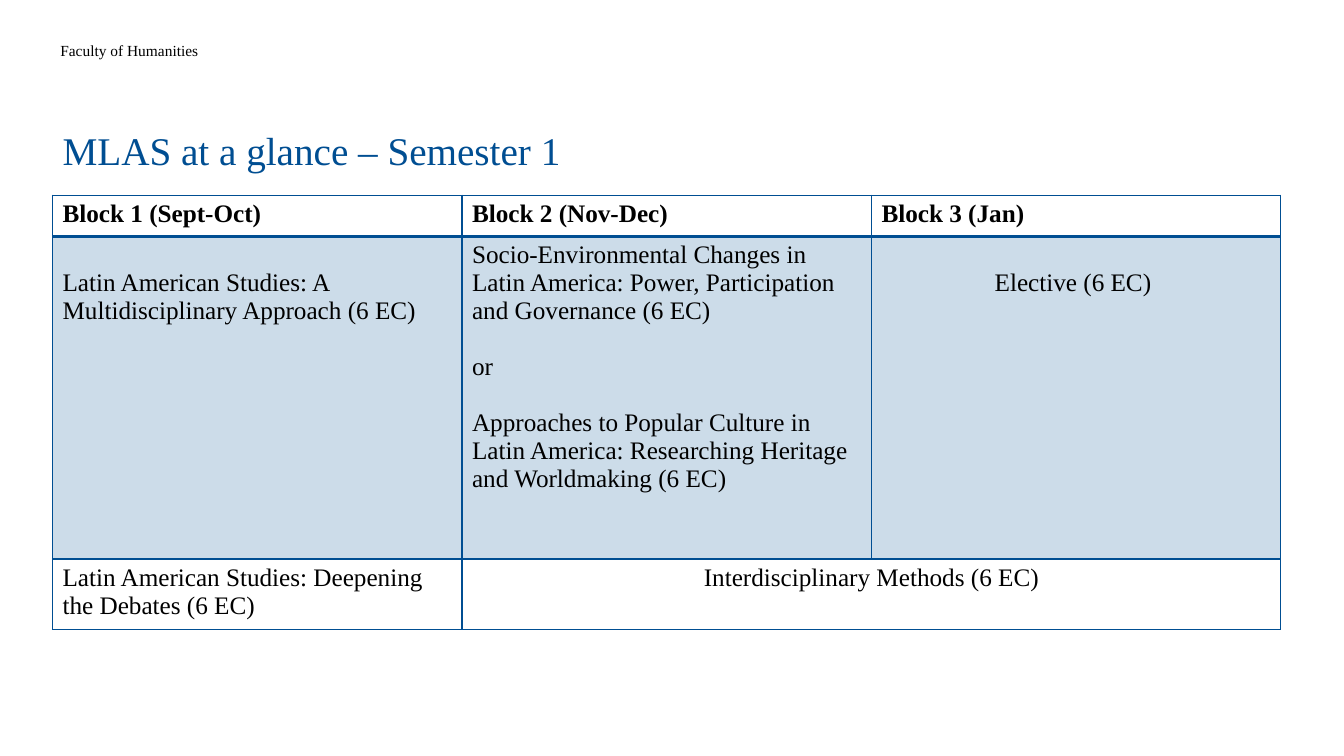
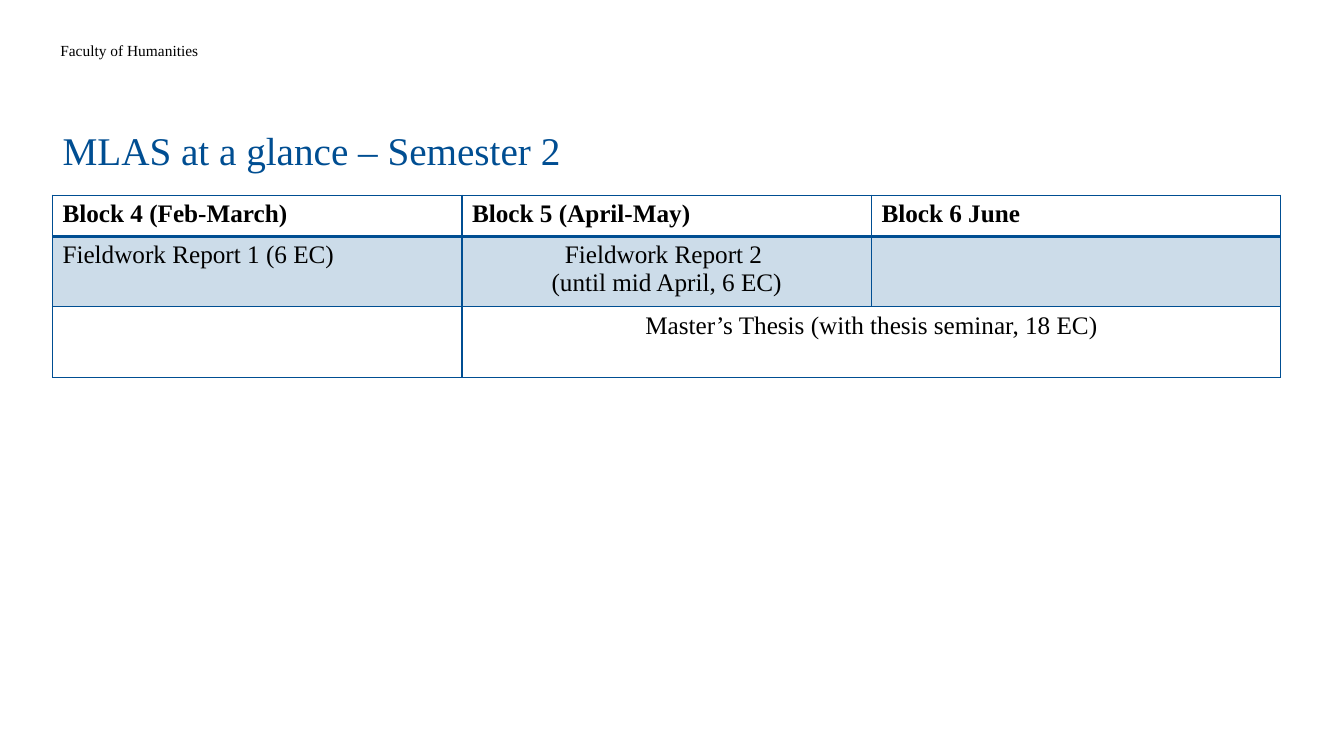
from dataclasses import dataclass

from lxml import etree
from pptx import Presentation
from pptx.dml.color import RGBColor
from pptx.enum.text import MSO_ANCHOR, MSO_AUTO_SIZE, PP_ALIGN
from pptx.oxml.ns import qn
from pptx.util import Pt

LEFT, CENTRE = PP_ALIGN.LEFT, PP_ALIGN.CENTER
BOTTOM = MSO_ANCHOR.BOTTOM
NO_FIT, GROW = MSO_AUTO_SIZE.NONE, MSO_AUTO_SIZE.SHAPE_TO_FIT_TEXT

COLOURS = {"blue": "004E92", "tint": "CCDCE9", "text": "000000"}
FONT = "Times New Roman"
TITLE_ONLY = 5
LINE = 20
CELL_MARGIN = 3.6
HEADER_BOX = (36, 26, 201.6, 21)
TITLE_BOX = (37.5, 54.7, 878.4, 73.4)
TABLE_BOX = (37.5, 139.5, 877.5)
HEADING_HEIGHT = 29.3
TWO_LINES = 50.4


@dataclass
class Entry:
    lines: tuple = ()
    align: int = LEFT
    gap: float = 0
    drop: float = 0
    span: int = 1


SEMESTERS = [
    (
        "MLAS at a glance – Semester 1",
        ("Block 1 (Sept-Oct)", "Block 2 (Nov-Dec)", "Block 3 (Jan)"),
        (230.5, TWO_LINES),
        [
            [
                Entry(("Latin American Studies: A Multidisciplinary Approach (6 EC)",), drop=LINE),
                Entry(
                    (
                        "Socio-Environmental Changes in Latin America: Power, "
                        "Participation and Governance (6 EC)",
                        "or",
                        "Approaches to Popular Culture in Latin America: "
                        "Researching Heritage and Worldmaking (6 EC)",
                    ),
                    gap=LINE,
                ),
                Entry(("Elective (6 EC) ",), CENTRE, drop=LINE),
            ],
            [
                Entry(("Latin American Studies: Deepening the Debates (6 EC)",)),
                Entry(("Interdisciplinary Methods (6 EC)",), CENTRE, span=2),
            ],
        ],
    ),
    (
        "MLAS at a glance – Semester 2",
        ("Block 4 (Feb-March)", "Block 5 (April-May)", "Block 6 June"),
        (TWO_LINES, TWO_LINES),
        [
            [
                Entry(("Fieldwork Report 1 (6 EC)",)),
                Entry(("Fieldwork Report 2 ", "(until mid April, 6 EC)"), CENTRE),
                Entry(),
            ],
            [
                Entry(),
                Entry(("Master’s Thesis (with thesis seminar, 18 EC)",), CENTRE, span=2),
            ],
        ],
    ),
]


def style_font(para, size, colour, bold=False):
    para.font.name = FONT
    para.font.size = Pt(size)
    para.font.bold = bold
    para.font.color.rgb = RGBColor.from_string(COLOURS[colour])


def add_header(page, layout, bounds):
    box = page.shapes.add_textbox(*map(Pt, bounds))
    frame = box.text_frame
    frame.word_wrap = True
    frame.auto_size = GROW
    frame.text = "Faculty of Humanities"
    style_font(frame.paragraphs[0], 11, "text")
    layout.shapes.element.append(box.element)


def place_title(page, text, bounds):
    title = page.shapes.title
    title.left, title.top, title.width, title.height = map(Pt, bounds)
    frame = title.text_frame
    frame.text = text
    frame.auto_size = NO_FIT
    frame.vertical_anchor = BOTTOM
    para = frame.paragraphs[0]
    para.alignment = LEFT
    para.line_spacing = 0.9
    style_font(para, 28, "blue")


def style_cell(cell, top, bottom, fill):
    properties = cell._tc.get_or_add_tcPr()
    for side, width in (("L", 1), ("R", 1), ("T", top), ("B", bottom)):
        line = etree.SubElement(properties, qn(f"a:ln{side}"), w=str(Pt(width)))
        solid = etree.SubElement(line, qn("a:solidFill"))
        etree.SubElement(solid, qn("a:srgbClr"), val=COLOURS["blue"])
    if fill:
        cell.fill.solid()
        cell.fill.fore_color.rgb = RGBColor.from_string(COLOURS[fill])
    else:
        cell.fill.background()


def fill_cell(cell, entry, bold):
    cell.margin_top = Pt(CELL_MARGIN + entry.drop)
    frame = cell.text_frame
    frame.text = "\n".join(entry.lines)
    for index, para in enumerate(frame.paragraphs):
        para.alignment = entry.align
        if index:
            para.space_before = Pt(entry.gap)
        style_font(para, 18, "text", bold)


def add_schedule(page, headings, heights, body, bounds):
    left, top, width = bounds
    heights = (HEADING_HEIGHT, *heights)
    rows = [[Entry((heading,)) for heading in headings], *body]
    frame = page.shapes.add_table(
        len(rows), len(headings), Pt(left), Pt(top), Pt(width), Pt(sum(heights))
    )
    table = frame.table
    table.first_row = table.horz_banding = False
    for column in table.columns:
        column.width = Pt(width / len(headings))
    for row, (height, entries) in enumerate(zip(heights, rows)):
        table.rows[row].height = Pt(height)
        for cell in table.rows[row].cells:
            style_cell(
                cell,
                top=2 if row == 1 else 1,
                bottom=2 if row == 0 else 1,
                fill="tint" if row == 1 else None,
            )
        column = 0
        for entry in entries:
            cell = table.cell(row, column)
            if entry.span > 1:
                cell.merge(table.cell(row, column + entry.span - 1))
            fill_cell(cell, entry, bold=row == 0)
            column += entry.span


def main():
    deck = Presentation()
    deck.slide_width, deck.slide_height = Pt(960), Pt(540)
    layout = deck.slide_layouts[TITLE_ONLY]
    for number, (title, headings, heights, body) in enumerate(SEMESTERS):
        page = deck.slides.add_slide(layout)
        if number == 0:
            add_header(page, layout, HEADER_BOX)
        place_title(page, title, TITLE_BOX)
        add_schedule(page, headings, heights, body, TABLE_BOX)
    deck.save("out.pptx")


if __name__ == "__main__":
    main()
